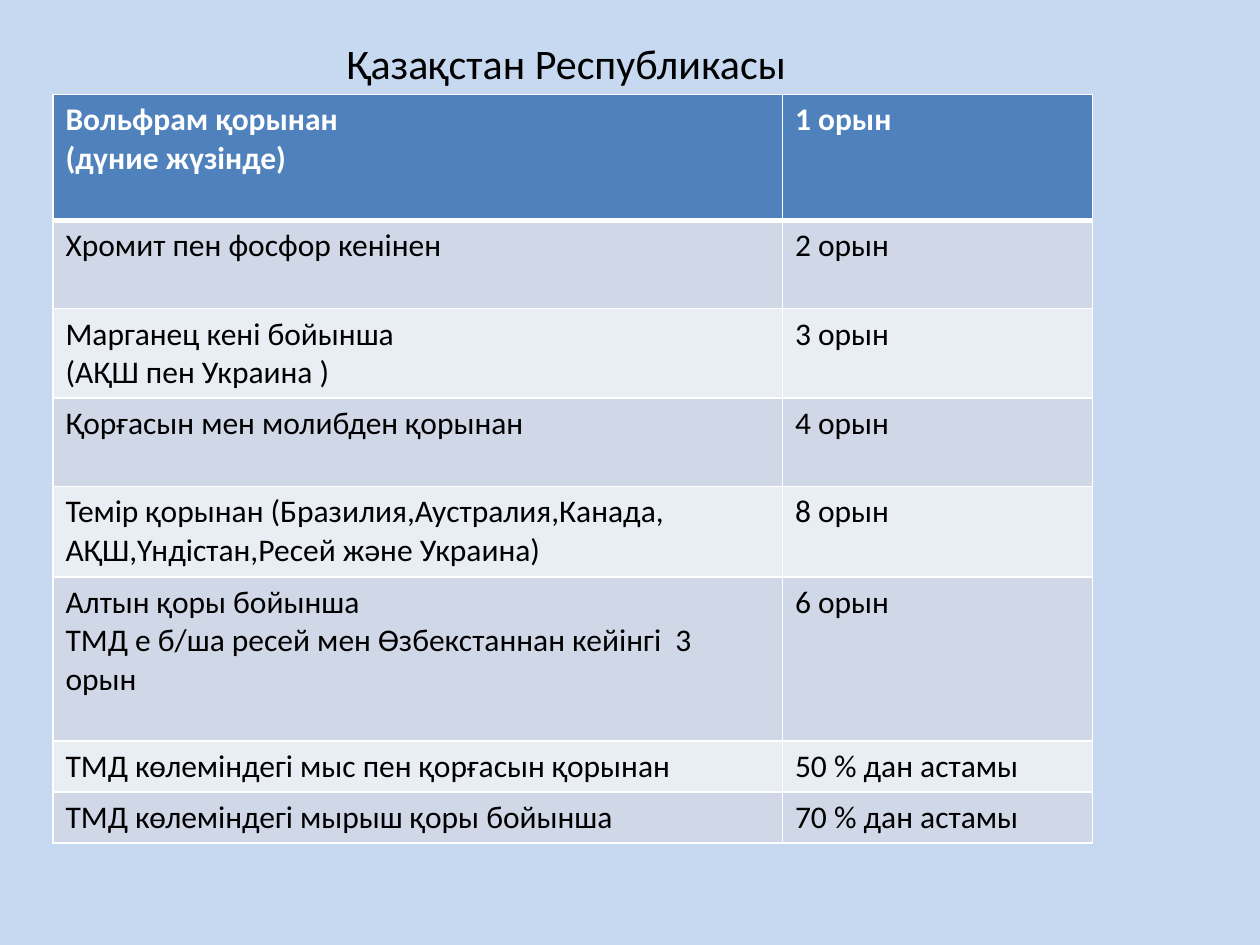
from dataclasses import dataclass
from typing import NamedTuple

from lxml.etree import SubElement as Sub
from pptx import Presentation as Deck
from pptx.dml.color import RGBColor as Color
from pptx.oxml.ns import qn
from pptx.util import Inches, Pt


@dataclass(frozen=True)
class Theme:
    font: str = "Calibri"
    back: str = "C6D9F1"
    head: str = "4F81BD"
    dark: str = "D0D8E8"
    light: str = "E9EDF4"
    white: str = "FFFFFF"
    black: str = "000000"
    title: int = 24
    body: int = 18
    thin: int = 1
    thick: int = 3


class Row(NamedTuple):
    name: str
    rank: str
    height: float


THEME = Theme()
COLS = (5.79, 2.46)
ROWS = (
    Row("Вольфрам қорынан\n(дүние жүзінде)", "1 орын", 1),
    Row("Хромит пен фосфор кенінен", "2 орын", 0.7),
    Row("Марганец кені бойынша\n(АҚШ пен Украина )", "3 орын", 0.7),
    Row("Қорғасын мен молибден қорынан", "4 орын", 0.7),
    Row("Темір қорынан (Бразилия,Аустралия,Канада,\n"
        "АҚШ,Үндістан,Ресей және Украина)", "8 орын", 0.72),
    Row("Алтын қоры бойынша\n"
        "ТМД е б/ша ресей мен Өзбекстаннан кейінгі  3 орын", "6 орын", 1.3),
    Row("ТМД көлеміндегі мыс пен қорғасын қорынан", "50 % дан астамы", 0.4),
    Row("ТМД көлеміндегі мырыш қоры бойынша", "70 % дан астамы", 0.4),
)


def style(frame, size: int, color: str, bold: bool = False) -> None:
    for para in frame.paragraphs:
        for run in para.runs:
            font = run.font
            font.name = THEME.font
            font.size = Pt(size)
            font.bold = bold
            font.color.rgb = Color.from_string(color)


def border(cell, top: int, bottom: int) -> None:
    props = cell._tc.get_or_add_tcPr()
    sides = {"L": THEME.thin, "R": THEME.thin, "T": top, "B": bottom}
    for side, width in sides.items():
        line = Sub(props, qn(f"a:ln{side}"), w=str(Pt(width)))
        fill = Sub(line, qn("a:solidFill"))
        Sub(fill, qn("a:srgbClr"), val=THEME.white)


def draw_cell(cell, text: str, index: int) -> None:
    head = index == 0
    cell.text_frame.text = text
    style(cell.text_frame, THEME.body, THEME.white if head else THEME.black, head)
    border(cell,
           THEME.thick if index == 1 else THEME.thin,
           THEME.thick if head else THEME.thin)
    band = THEME.dark if index % 2 else THEME.light
    cell.fill.solid()
    cell.fill.fore_color.rgb = Color.from_string(THEME.head if head else band)


def draw_table(slide) -> None:
    high = sum(row.height for row in ROWS)
    table = slide.shapes.add_table(
        len(ROWS), len(COLS), Inches(0.42), Inches(0.75),
        Inches(sum(COLS)), Inches(high)).table
    for col, width in zip(table.columns, COLS):
        col.width = Inches(width)
    for index, row in enumerate(ROWS):
        table.rows[index].height = Inches(row.height)
        for col, text in enumerate((row.name, row.rank)):
            draw_cell(table.cell(index, col), text, index)


def draw_title(slide) -> None:
    box = slide.shapes.add_textbox(
        Inches(1.67), Inches(0.25), Inches(6.18), Inches(0.5))
    frame = box.text_frame
    frame.word_wrap = True
    frame.text = "Қазақстан Республикасы"
    frame.paragraphs[0]._p.get_or_add_pPr().set("marL", str(Inches(0.98)))
    style(frame, THEME.title, THEME.black)


def main() -> None:
    deck = Deck()
    deck.slide_width, deck.slide_height = Inches(10), Inches(7.5)
    slide = deck.slides.add_slide(deck.slide_layouts[6])
    back = slide.background.fill
    back.solid()
    back.fore_color.rgb = Color.from_string(THEME.back)
    draw_table(slide)
    draw_title(slide)
    deck.save("out.pptx")


if __name__ == "__main__":
    main()
